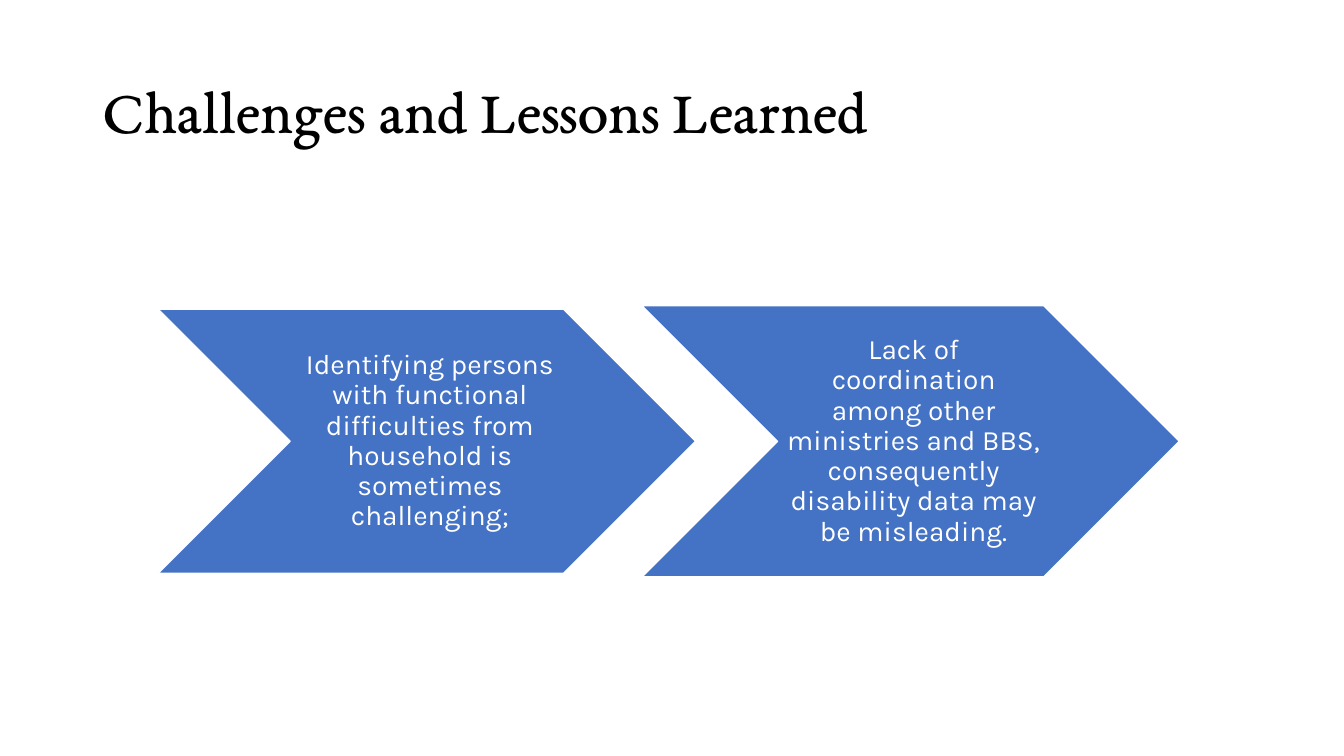
import pptx
import pptx.util
import pptx.dml.color
import pptx.enum.shapes
import pptx.enum.text

Cm, Pt = pptx.util.Cm, pptx.util.Pt
RGBColor = pptx.dml.color.RGBColor
PP_ALIGN, MSO_ANCHOR = pptx.enum.text.PP_ALIGN, pptx.enum.text.MSO_ANCHOR

# Content
TITLE = "Challenges and Lessons Learned"
CHALLENGES = [  # text, chevron height in cm
    ("Identifying persons with functional difficulties from household is "
     "sometimes challenging;", 6.65),
    ("Lack of coordination among other ministries and BBS, consequently "
     "disability data may be misleading.", 6.83),
]

# Style and layout (cm)
BLUE = RGBColor(0x44, 0x72, 0xC4)
WHITE = RGBColor(0xFF, 0xFF, 0xFF)
BLACK = RGBColor(0, 0, 0)
LEFT, WIDTH, STEP, MIDDLE = 3.99, 13.54, 12.19, 11.12


def write(shape, text, font, size, color, align, margins):
    tf = shape.text_frame
    tf.word_wrap = True
    tf.vertical_anchor = MSO_ANCHOR.MIDDLE
    tf.margin_left, tf.margin_top, tf.margin_right, tf.margin_bottom = map(Cm, margins)
    tf.text = text
    p = tf.paragraphs[0]
    p.alignment = align
    p.line_spacing = 0.9
    r = p.runs[0]
    r.font.name, r.font.size = font, Pt(size)
    r.font.color.rgb = color


prs = pptx.Presentation()
prs.slide_width, prs.slide_height = Cm(33.87), Cm(19.05)
s = prs.slides.add_slide(prs.slide_layouts[6])

# Title
title = s.shapes.add_textbox(Cm(2.33), Cm(1.01), Cm(29.21), Cm(3.68))
write(title, TITLE, "EB Garamond", 44, BLACK, PP_ALIGN.LEFT, (0.25, 0.13, 0.25, 0.13))

# Chevrons, centred on one horizontal line
for i, (text, height) in enumerate(CHALLENGES):
    sp = s.shapes.add_shape(
        pptx.enum.shapes.MSO_SHAPE.CHEVRON,
        Cm(LEFT + i * STEP), Cm(MIDDLE - height / 2), Cm(WIDTH), Cm(height))
    sp.shadow.inherit = False
    sp.fill.solid()
    sp.fill.fore_color.rgb = BLUE
    sp.line.color.rgb = WHITE
    sp.line.width = Pt(1)
    write(sp, text, "Karla", 20, WHITE, PP_ALIGN.CENTER, (0.23, 0.08, 0.08, 0.08))

prs.save("out.pptx")
